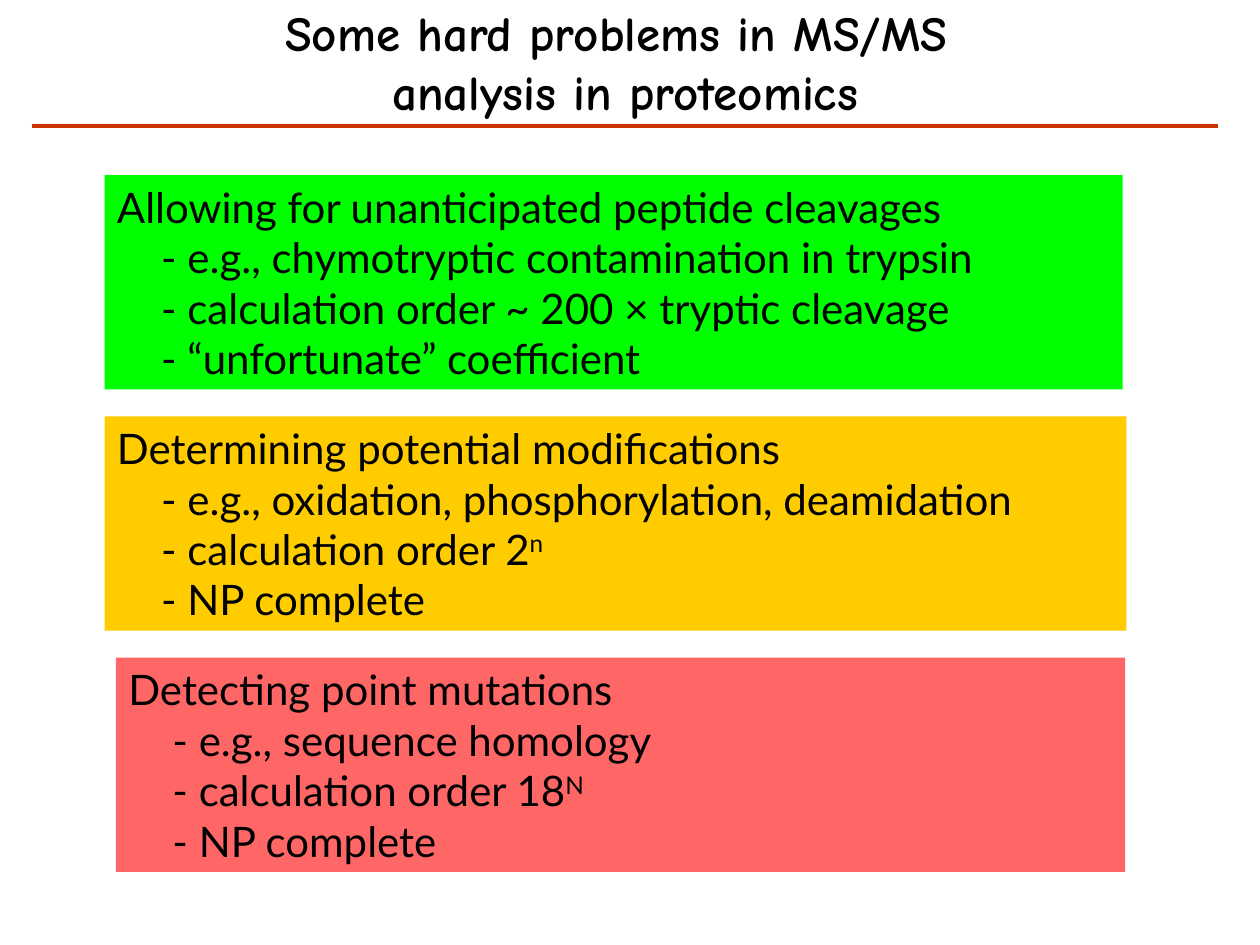
from dataclasses import dataclass

from lxml import etree
from pptx import Presentation
from pptx.dml.color import RGBColor
from pptx.enum import shapes, text
from pptx.oxml.ns import qn
from pptx.util import Inches, Pt


@dataclass(frozen=True)
class Theme:
    ink: str = "000000"
    rule: str = "CC3300"
    easy: str = "00FF00"
    medium: str = "FFCC00"
    hard: str = "FF0000"
    title_font: str = "Comic Neue"
    body_font: str = "Lato"
    title_size: int = 28
    body_size: int = 24
    rule_width: float = 2.5
    detail_indent: float = 0.35


@dataclass(frozen=True)
class Problem:
    left: float
    width: float
    fill: str
    heading: str
    details: tuple[str, ...]  # "^" starts a superscript
    opacity: int = 100


THEME = Theme()
BOX_TOP, BOX_HEIGHT, BOX_PITCH = 1.39, 1.7, 1.915

PROBLEMS = (
    Problem(0.83, 8.08, THEME.easy, "Allowing for unanticipated peptide cleavages",
            ("e.g., chymotryptic contamination in trypsin",
             "calculation order ~ 200 × tryptic cleavage",
             "“unfortunate” coefficient")),
    Problem(0.83, 8.11, THEME.medium, "Determining potential modifications",
            ("e.g., oxidation, phosphorylation, deamidation",
             "calculation order 2^n",
             "NP complete")),
    Problem(0.92, 8.01, THEME.hard, "Detecting point mutations",
            ("e.g., sequence homology",
             "calculation order 18^N",
             "NP complete"), opacity=60),
)


def write_paragraph(paragraph, content: str, *, font: str, size: int,
                    bold: bool = False, indent: float = 0,
                    align=text.PP_ALIGN.LEFT) -> None:
    """Write one line; what follows a "^" is raised."""
    paragraph.alignment = align
    if indent:
        paragraph._p.get_or_add_pPr().set("marL", str(Inches(indent)))
    base, _, superscript = content.partition("^")
    for part, raised in ((base, False), (superscript, True)):
        if not part:
            continue
        run = paragraph.add_run()
        run.text = part
        run.font.name = font
        run.font.size = Pt(size)
        run.font.bold = bold
        run.font.color.rgb = RGBColor.from_string(THEME.ink)
        if raised:
            run._r.get_or_add_rPr().set("baseline", "30000")


def add_title(slide, lines: tuple[str, ...]) -> None:
    shape = slide.shapes.add_textbox(Inches(1.79), Inches(-0.03), Inches(6.34), Inches(1.04))
    frame = shape.text_frame
    frame.word_wrap = False
    for index, line in enumerate(lines):
        paragraph = frame.add_paragraph() if index else frame.paragraphs[0]
        write_paragraph(paragraph, line, font=THEME.title_font, size=THEME.title_size,
                        bold=True, align=text.PP_ALIGN.CENTER)


def add_rule(slide) -> None:
    connector = slide.shapes.add_connector(
        shapes.MSO_CONNECTOR.STRAIGHT, Inches(0.25), Inches(1), Inches(9.67), Inches(1))
    connector.line.color.rgb = RGBColor.from_string(THEME.rule)
    connector.line.width = Pt(THEME.rule_width)
    etree.SubElement(connector._element.spPr, qn("a:effectLst"))


def add_problem(slide, problem: Problem, top: float) -> None:
    shape = slide.shapes.add_shape(
        shapes.MSO_SHAPE.RECTANGLE, Inches(problem.left), Inches(top),
        Inches(problem.width), Inches(BOX_HEIGHT))
    shape.shadow.inherit = False
    shape.line.fill.background()
    shape.fill.solid()
    shape.fill.fore_color.rgb = RGBColor.from_string(problem.fill)
    if problem.opacity < 100:
        color = shape._element.spPr.find(qn("a:solidFill"))[0]
        etree.SubElement(color, qn("a:alpha"), val=str(problem.opacity * 1000))

    frame = shape.text_frame
    frame.word_wrap = True
    frame.vertical_anchor = text.MSO_ANCHOR.TOP
    style = {"font": THEME.body_font, "size": THEME.body_size}
    write_paragraph(frame.paragraphs[0], problem.heading, **style)
    for detail in problem.details:
        write_paragraph(frame.add_paragraph(), f"- {detail}",
                        indent=THEME.detail_indent, **style)


def main() -> None:
    presentation = Presentation()
    presentation.slide_width, presentation.slide_height = Inches(10), Inches(7.5)
    slide = presentation.slides.add_slide(presentation.slide_layouts[6])

    # Heading
    add_title(slide, ("Some hard problems in MS/MS ", "analysis in proteomics"))
    add_rule(slide)

    # Problems, from easiest to hardest
    for row, problem in enumerate(PROBLEMS):
        add_problem(slide, problem, BOX_TOP + row * BOX_PITCH)

    presentation.save("out.pptx")


if __name__ == "__main__":
    main()
